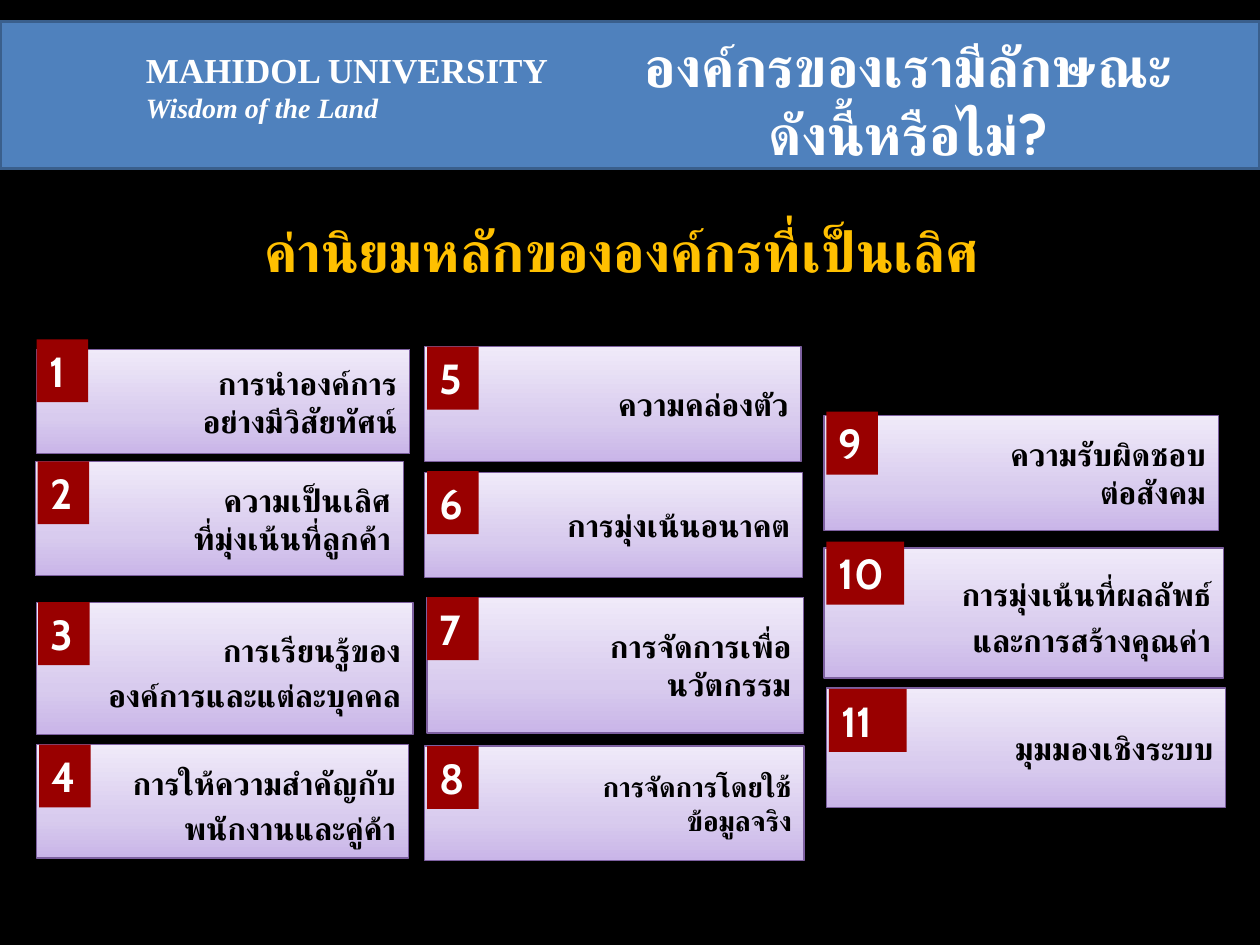
from copy import deepcopy

from pptx import Presentation
from pptx.dml.color import RGBColor
from pptx.enum.shapes import MSO_SHAPE
from pptx.enum.text import MSO_ANCHOR, MSO_AUTO_SIZE, PP_ALIGN
from pptx.util import Cm, Pt

RECT = MSO_SHAPE.RECTANGLE
MIDDLE = MSO_ANCHOR.MIDDLE
TOP = MSO_ANCHOR.TOP
GROW = MSO_AUTO_SIZE.SHAPE_TO_FIT_TEXT
LEFT, CENTER, RIGHT = PP_ALIGN.LEFT, PP_ALIGN.CENTER, PP_ALIGN.RIGHT

WHITE, BLACK, GOLD = "FFFFFF", "000000", "FFC000"
BLUE, NAVY, PURPLE, RED = "4F81BD", "3A5F8C", "7D60A0", "990000"
LILAC = [(0, "C9B5E8"), (0.35, "D8CBEE"), (1, "F0EAF9")]

CARDS = [
    ("1", ["การนำองค์การ", "อย่างมีวิสัยทัศน์"], (0.74, 7.04, 7.52, 2.11), (0, -0.2), 18, None),
    ("2", ["ความเป็นเลิศ", "ที่มุ่งเน้นที่ลูกค้า"], (0.71, 9.3, 7.42, 2.31), (0.05, 0), 18, None),
    ("3", ["การเรียนรู้ของ", "องค์การและแต่ละบุคคล"], (0.74, 12.14, 7.59, 2.67), (0.03, 0), 18, 1.2),
    ("4", ["การให้ความสำคัญกับ", "พนักงานและคู่ค้า"], (0.74, 15.01, 7.49, 2.29), (0.05, 0), 18, 1.2),
    ("5", ["ความคล่องตัว"], (8.56, 6.99, 7.59, 2.31), (0.05, 0), 18, None),
    ("6", ["การมุ่งเน้นอนาคต"], (8.56, 9.53, 7.62, 2.11), (0.05, -0.03), 18, None),
    ("7", ["การจัดการเพื่อ", "นวัตกรรม"], (8.61, 12.04, 7.59, 2.74), (0, 0), 18, None),
    ("8", ["การจัดการโดยใช้", "ข้อมูลจริง"], (8.56, 15.04, 7.65, 2.31), (0.05, 0), 16, None),
    ("9", ["ความรับผิดชอบ", "ต่อสังคม"], (16.61, 8.38, 7.95, 2.31), (0.05, -0.08), 18, None),
    ("10", ["การมุ่งเน้นที่ผลลัพธ์", "และการสร้างคุณค่า"], (16.61, 11.05, 8.05, 2.62), (0.05, -0.13), 18, 1.2),
    ("11", ["มุมมองเชิงระบบ"], (16.66, 13.87, 8.05, 2.41), (0.05, 0.02), 18, None),
]


def rgb(value):
    return RGBColor.from_string(value)


def add_rect(s, x, y, w, h, fill=None, line=None, weight=0.75):
    sp = s.shapes.add_shape(RECT, Cm(x), Cm(y), Cm(w), Cm(h))
    sp.shadow.inherit = False
    if fill:
        sp.fill.solid()
        sp.fill.fore_color.rgb = rgb(fill)
    if line:
        sp.line.color.rgb = rgb(line)
        sp.line.width = Pt(weight)
    else:
        sp.line.fill.background()
    return sp


def add_text_box(s, x, y, w, h):
    return s.shapes.add_textbox(Cm(x), Cm(y), Cm(w), Cm(h))


def set_text(sp, lines, size, font, color, align=LEFT, anchor=TOP,
             wrap=False, grow=False, spacing=None):
    tf = sp.text_frame
    tf.text = "\n".join(lines)
    tf.word_wrap = wrap
    tf.vertical_anchor = anchor
    if grow:
        tf.auto_size = GROW
    for p in tf.paragraphs:
        p.alignment = align
        if spacing:
            p.line_spacing = spacing
        for r in p.runs:
            r.font.name = font
            r.font.size = Pt(size)
            r.font.bold = True
            r.font.color.rgb = rgb(color)
    return tf


def fill_gradient(sp, stops, angle):
    sp.fill.gradient()
    sp.fill.gradient_angle = angle
    first = sp.fill.gradient_stops[0]
    stop_list = sp._element.spPr.gradFill.gsLst
    stop_list.append(deepcopy(stop_list[0]))
    first.position = 0
    for stop, (position, color) in zip(sp.fill.gradient_stops, stops):
        stop.position = position
        stop.color.rgb = rgb(color)


def add_header(s, x, y, w, h):
    add_rect(s, x, y, w, h, BLUE, NAVY, 2)
    name = add_text_box(s, x + 2.69, y + 0.43, 8.66, 1.78)
    tf = set_text(name, ["MAHIDOL UNIVERSITY", "Wisdom of the Land"], 20,
                  "Times New Roman", WHITE, grow=True)
    motto = tf.paragraphs[1].runs[0].font
    motto.size = Pt(16)
    motto.italic = True
    title = add_text_box(s, x + 11.86, y + 0.2, 12.9, 2.74)
    set_text(title, ["องค์กรของเรามีลักษณะดังนี้หรือไม่?"], 32, "Quicksand", WHITE,
             CENTER, MIDDLE, wrap=True)


def add_subtitle(s, x, y, w, h):
    sp = add_text_box(s, x, y, w, h)
    set_text(sp, ["ค่านิยมหลักขององค์กรที่เป็นเลิศ"], 32, "Arial", GOLD, grow=True)


def add_card(s, number, lines, box, badge_offset, size, spacing):
    x, y, w, h = box
    dx, dy = badge_offset
    card = add_rect(s, x, y, w, h, line=PURPLE)
    fill_gradient(card, LILAC, 90)
    set_text(card, lines, size, "Cabin", BLACK, RIGHT, MIDDLE, spacing=spacing)
    badge_width = 0.51 + 0.53 * len(number)
    badge = add_rect(s, x + dx, y + dy, badge_width, 1.27, RED)
    set_text(badge, [number], 24, "Cabin", WHITE, grow=True)


def main():
    prs = Presentation()
    prs.slide_width = Cm(25.4)
    prs.slide_height = Cm(19.05)
    s = prs.slides.add_slide(prs.slide_layouts[6])
    s.background.fill.solid()
    s.background.fill.fore_color.rgb = rgb(BLACK)
    add_header(s, 0, 0.43, 25.4, 2.97)
    for card in CARDS:
        add_card(s, *card)
    add_subtitle(s, 5.08, 4.24, 15.93, 2.16)
    prs.save("out.pptx")


if __name__ == "__main__":
    main()
